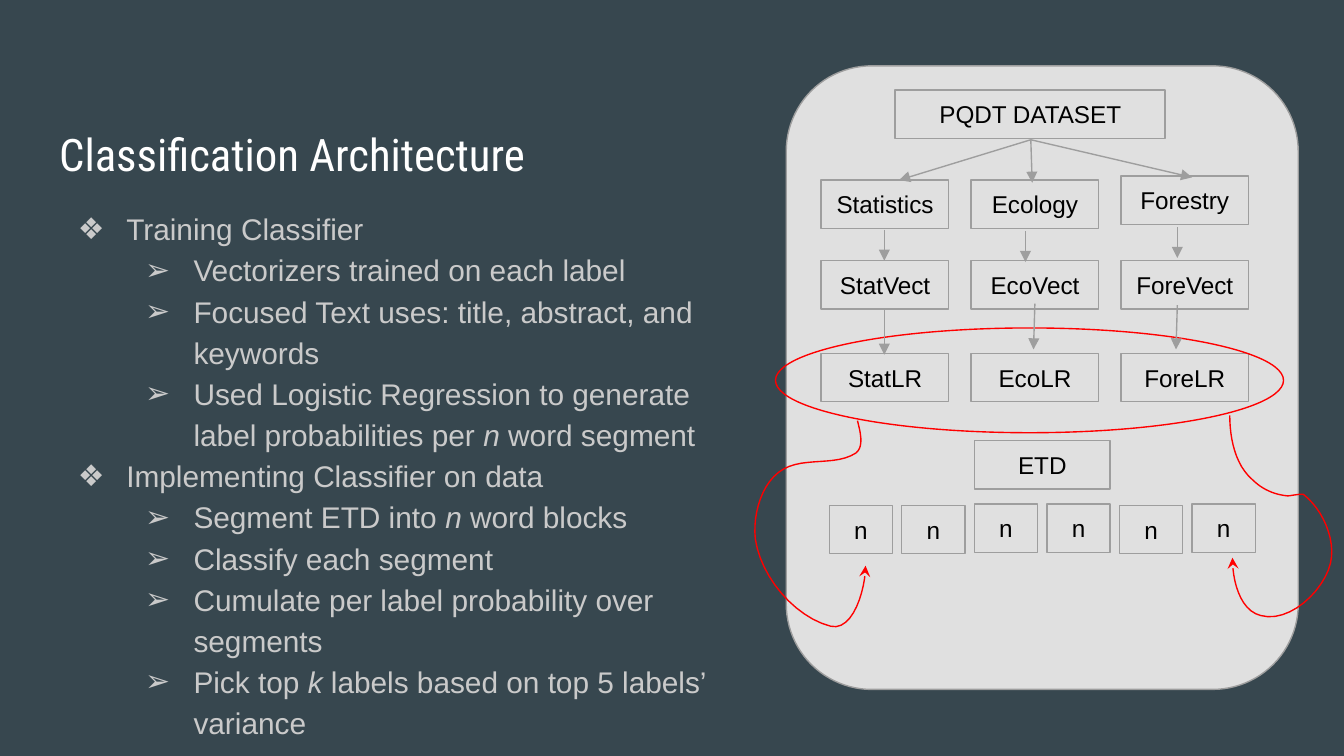
from lxml import etree
from pptx import Presentation
from pptx.dml.color import RGBColor
from pptx.enum.shapes import MSO_CONNECTOR, MSO_SHAPE
from pptx.enum.text import MSO_ANCHOR, MSO_AUTO_SIZE, PP_ALIGN
from pptx.oxml.ns import qn
from pptx.util import Inches, Pt

SLATE = RGBColor(0x37, 0x47, 0x4F)
WHITE = RGBColor(0xFF, 0xFF, 0xFF)
SILVER = RGBColor(0xCA, 0xCA, 0xCA)
PALE = RGBColor(0xE0, 0xE0, 0xE0)
GREY = RGBColor(0x9E, 0x9E, 0x9E)
RED = RGBColor(0xFF, 0x00, 0x00)
BLACK = RGBColor(0x00, 0x00, 0x00)
RECT, ROUNDED, OVAL = MSO_SHAPE.RECTANGLE, MSO_SHAPE.ROUNDED_RECTANGLE, MSO_SHAPE.OVAL
STRAIGHT = MSO_CONNECTOR.STRAIGHT
LEFT, CENTER = PP_ALIGN.LEFT, PP_ALIGN.CENTER
TOP, MIDDLE, BOTTOM = MSO_ANCHOR.TOP, MSO_ANCHOR.MIDDLE, MSO_ANCHOR.BOTTOM
NO_FIT = MSO_AUTO_SIZE.NONE
MARGIN = Inches(0.1)

prs = Presentation()
prs.slide_width = Inches(10)
prs.slide_height = prs.slide_width * 9 // 16
slide = prs.slides.add_slide(prs.slide_layouts[1])
slide.background.fill.solid()
slide.background.fill.fore_color.rgb = SLATE
shapes = slide.shapes


def add_block(kind, left, top, width, height, label="", fill=PALE, outline=GREY):
    block = shapes.add_shape(kind, Inches(left), Inches(top), Inches(width), Inches(height))
    block.shadow.inherit = False
    if fill is None:
        block.fill.background()
    else:
        block.fill.solid()
        block.fill.fore_color.rgb = fill
    block.line.color.rgb = outline
    block.line.width = Pt(0.75)
    if label:
        frame = block.text_frame
        frame.text = label
        frame.vertical_anchor = MIDDLE
        frame.margin_left = frame.margin_right = MARGIN
        frame.margin_top = frame.margin_bottom = MARGIN
        frame.paragraphs[0].alignment = CENTER
        font = frame.paragraphs[0].runs[0].font
        font.size, font.name, font.color.rgb = Pt(13), "Arial", BLACK
    return block


def add_arrowhead(arrow, color, head):
    arrow.line.color.rgb = color
    arrow.line.width = Pt(0.75)
    etree.SubElement(arrow.line._get_or_add_ln(), qn("a:tailEnd"), type=head)


title, body = shapes.title, slide.placeholders[1]
for holder, (left, top, width, height), anchor in [
    (title, (0.34, 0.61, 4.26, 0.83), BOTTOM),
    (body, (0.34, 1.43, 5.12, 3.48), TOP),
]:
    holder.left, holder.top = Inches(left), Inches(top)
    holder.width, holder.height = Inches(width), Inches(height)
    frame = holder.text_frame
    frame.word_wrap, frame.auto_size = True, NO_FIT
    frame.vertical_anchor = anchor
    frame.margin_left = frame.margin_right = MARGIN
    frame.margin_top = frame.margin_bottom = MARGIN

title.text_frame.text = "Classification Architecture"
heading = title.text_frame.paragraphs[0]
heading.alignment = LEFT
font = heading.runs[0].font
font.size, font.name, font.color.rgb = Pt(24), "Roboto Condensed", WHITE

outline = [
    (0, ["Training Classifier"]),
    (1, ["Vectorizers trained on each label"]),
    (1, ["Focused Text uses: title, abstract, and keywords"]),
    (1, ["Used Logistic Regression to generate label probabilities per ", "n ", "word segment"]),
    (0, ["Implementing Classifier on data"]),
    (1, ["Segment ETD into ", "n", " word blocks"]),
    (1, ["Classify each segment"]),
    (1, ["Cumulate per label probability over segments"]),
    (1, ["Pick top ", "k", " labels based on top 5 labels’ variance"]),
]
body.text_frame.text = "\n".join(pieces[0] for level, pieces in outline)
for item, (level, pieces) in zip(body.text_frame.paragraphs, outline):
    item.level = level
    item.alignment = LEFT
    item.line_spacing = 1.15
    item.space_before = item.space_after = Pt(0)
    properties = item._p.get_or_add_pPr()
    properties.set("marL", str(Inches(0.5 * (level + 1))))
    properties.set("indent", str(Inches(-0.36)))
    bullet_color = etree.SubElement(properties, qn("a:buClr"))
    etree.SubElement(bullet_color, qn("a:srgbClr"), val=str(SILVER))
    etree.SubElement(properties, qn("a:buFont"), typeface="Arial")
    etree.SubElement(properties, qn("a:buChar"), char="❖➢"[level])
    for piece in pieces[1:]:
        item.add_run().text = piece
    for position, run in enumerate(item.runs):
        run.font.size, run.font.name, run.font.color.rgb = Pt(16), "Arial", SILVER
        run.font.italic = position == 1

panel = add_block(ROUNDED, 5.85, 0.49, 3.81, 4.64)
panel.adjustments[0] = 0.167

BOX_HEIGHT = 0.36
add_block(RECT, 6.66, 0.67, 2.01, BOX_HEIGHT, "PQDT DATASET")
stages = [
    (1.34, ["Statistics", "Ecology", "Forestry"]),
    (1.94, ["StatVect", "EcoVect", "ForeVect"]),
    (2.63, ["StatLR", "EcoLR", "ForeLR"]),
]
for top, labels in stages:
    for column, label in enumerate(labels):
        lift = 0.03 if label == "Forestry" else 0
        add_block(RECT, 6.11 + 1.115 * column, top - lift, 0.95, BOX_HEIGHT, label)

add_block(RECT, 7.25, 3.28, 1.01, BOX_HEIGHT, "ETD")
for segment, top in enumerate([3.76, 3.76, 3.75, 3.75, 3.76, 3.75]):
    add_block(RECT, 6.17 + 0.54 * segment, top, 0.47, BOX_HEIGHT, "n")

add_block(OVAL, 5.77, 2.44, 3.78, 0.78, fill=None, outline=RED)

loops = [
    [(6.38, 3.13), (6.4, 3.21), (6.43, 3.32), (6.37, 3.37),
     (6.22, 3.47), (5.99, 3.4), (5.83, 3.49),
     (5.67, 3.58), (5.6, 3.82), (5.62, 4.01),
     (5.66, 4.29), (5.91, 4.59), (6.18, 4.66),
     (6.35, 4.7), (6.44, 4.38), (6.44, 4.21)],
    [(9.15, 3.09), (9.15, 3.26), (9.19, 3.46), (9.32, 3.57),
     (9.39, 3.64), (9.48, 3.68), (9.58, 3.69),
     (9.6, 3.69), (9.69, 3.67), (9.7, 3.68),
     (9.84, 3.79), (9.94, 4.01), (9.9, 4.19),
     (9.85, 4.4), (9.59, 4.64), (9.38, 4.58),
     (9.22, 4.54), (9.17, 4.31), (9.17, 4.15)],
]
STEPS = 12
for knots in loops:
    points = []
    for start in range(0, len(knots) - 1, 3):
        curve = knots[start:start + 4]
        for step in range(1, STEPS + 1):
            t = step / STEPS
            weights = [(1 - t) ** 3, 3 * t * (1 - t) ** 2, 3 * t * t * (1 - t), t ** 3]
            x, y = [sum(w * knot[axis] for w, knot in zip(weights, curve)) for axis in (0, 1)]
            points.append((Inches(x), Inches(y)))
    first_x, first_y = knots[0]
    builder = shapes.build_freeform(Inches(first_x), Inches(first_y))
    builder.add_line_segments(points, close=False)
    loop = builder.convert_to_shape()
    loop.shadow.inherit = False
    loop.fill.background()
    add_arrowhead(loop, RED, "stealth")

flows = [
    (7.67, 1.04, 6.69, 1.34), (7.67, 1.04, 7.68, 1.36), (7.67, 1.04, 8.87, 1.32),
    (6.58, 1.71, 6.58, 1.94), (7.63, 1.72, 7.63, 1.95), (8.76, 1.69, 8.76, 1.92),
    (6.58, 2.3, 6.58, 2.64), (7.7, 2.26, 7.69, 2.6), (8.76, 2.27, 8.75, 2.6),
]
for ends in flows:
    flow = shapes.add_connector(STRAIGHT, *[Inches(end) for end in ends])
    add_arrowhead(flow, GREY, "triangle")
    etree.SubElement(flow._element.spPr, qn("a:effectLst"))

prs.save("out.pptx")
